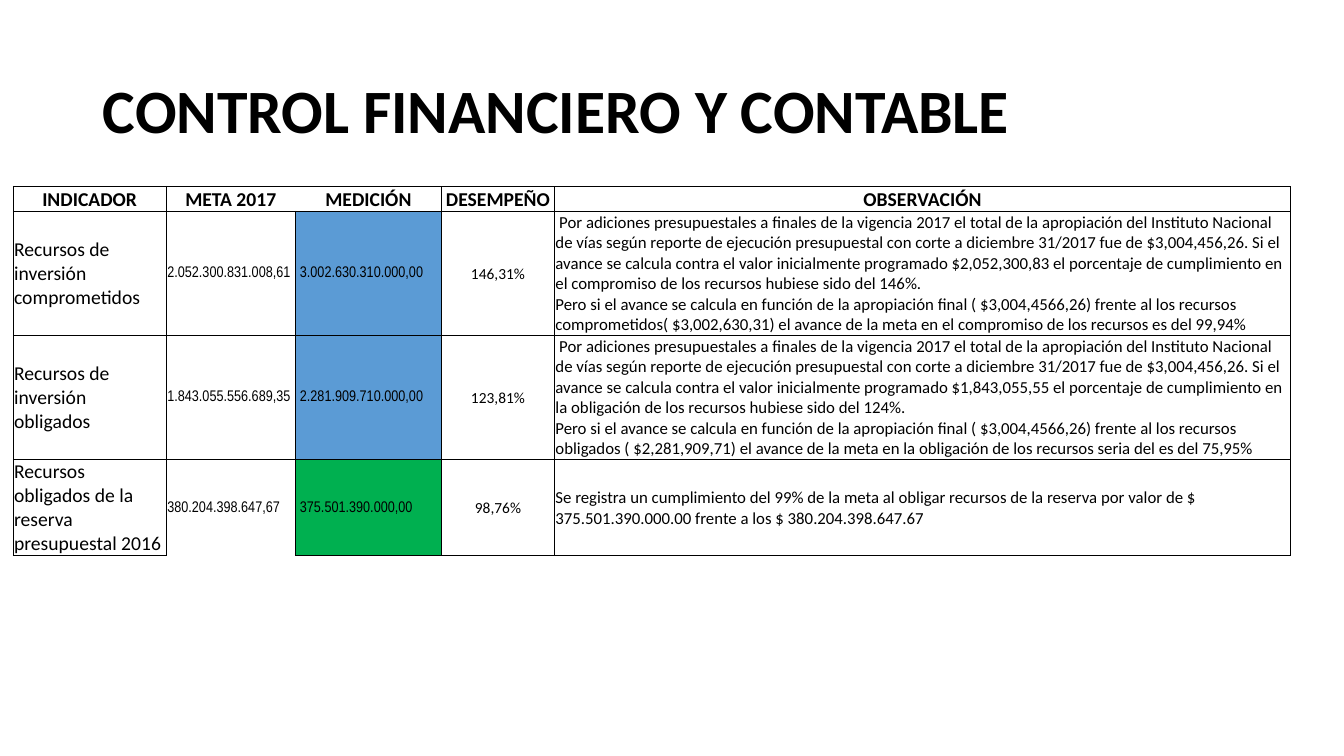
import pptx
import pptx.dml.color
import pptx.enum.text
import pptx.oxml
import pptx.oxml.ns
import pptx.util
from pptx.util import Inches

COLUMN_WIDTHS = [1.52, 1.28, 1.45, 1.12, 7.3]
ROW_HEIGHTS = [0.23, 1.23, 1.23, 0.78]
HEADERS = ["INDICADOR", "META 2017", "MEDICIÓN", "DESEMPEÑO", "OBSERVACIÓN"]
BLUE, GREEN, BLACK = "5B9BD5", "00B050", "000000"

BUDGET_NOTE = (
    " Por adiciones presupuestales a finales de la vigencia 2017 el total de la apropiación "
    "del Instituto Nacional de vías según reporte de ejecución presupuestal con corte a "
    "diciembre 31/2017 fue de $3,004,456,26. Si el avance se calcula contra el valor "
    "inicialmente programado {planned} el porcentaje de cumplimiento en {action} de los "
    "recursos hubiese sido del {percent}.\v"
    "Pero si el avance se calcula en función de la apropiación final ( $3,004,4566,26) "
    "frente al los recursos {measured} el avance de la meta en {action} de los recursos {result}"
)

INDICATORS = [
    ["Recursos de inversión comprometidos", "2.052.300.831.008,61",
     " 3.002.630.310.000,00", "146,31%",
     BUDGET_NOTE.format(planned="$2,052,300,83", action="el compromiso", percent="146%",
                        measured="comprometidos( $3,002,630,31)", result="es del 99,94%")],
    ["Recursos de inversión obligados", "1.843.055.556.689,35",
     " 2.281.909.710.000,00", "123,81%",
     BUDGET_NOTE.format(planned="$1,843,055,55", action="la obligación", percent="124%",
                        measured="obligados ( $2,281,909,71)",
                        result="seria del es del 75,95%")],
    ["Recursos obligados de la reserva presupuestal 2016", "380.204.398.647,67",
     " 375.501.390.000,00", "98,76%",
     "Se registra un cumplimiento del 99% de la meta al obligar recursos de la reserva por "
     "valor de $ 375.501.390.000.00 frente a los $ 380.204.398.647.67"],
]
MEASUREMENT_FILLS = [BLUE, BLUE, GREEN]
BODY_STYLES = [("Calibri", 14), ("Arial Narrow", 11), ("Arial Narrow", 11),
               ("Calibri", 11), ("Calibri", 12)]


def color(value):
    return pptx.dml.color.RGBColor.from_string(value)


def format_paragraph(paragraph, font_name, size, bold, centered):
    alignment = pptx.enum.text.PP_ALIGN
    paragraph.alignment = alignment.CENTER if centered else alignment.LEFT
    for run in paragraph.runs:
        run.font.name = font_name
        run.font.size = pptx.util.Pt(size)
        run.font.bold = bold
        run.font.color.rgb = color(BLACK)


def set_borders(cell, widths):
    properties = cell._tc.get_or_add_tcPr()
    namespace = pptx.oxml.ns.nsdecls("a")
    for side in "LRTB":
        width = widths[side]
        paint = f'<a:solidFill><a:srgbClr val="{BLACK}"/></a:solidFill>' if width else "<a:noFill/>"
        properties.append(pptx.oxml.parse_xml(
            f'<a:ln{side} {namespace} w="{int(pptx.util.Pt(width))}">{paint}</a:ln{side}>'))


def border_widths(row, column):
    widths = dict.fromkeys("LRTB", 0.5)
    if column < 3:
        if row == 0:
            widths.update(T=1, B=1)
        elif row == 1:
            widths["T"] = 1
    if column == len(HEADERS) - 1:
        widths["R"] = 1
    if (row, column) == (0, 1):
        widths["R"] = 0
    if (row, column) == (0, 2):
        widths["L"] = 0
    if (row, column) == (len(INDICATORS), 1):
        widths["B"] = 0
    return widths


def fill_cell(cell, text, row, column):
    cell.margin_left = cell.margin_right = cell.margin_top = Inches(0.01)
    cell.margin_bottom = Inches(0)
    cell.vertical_anchor = pptx.enum.text.MSO_ANCHOR.MIDDLE
    set_borders(cell, border_widths(row, column))
    if row > 0 and column == 2:
        cell.fill.solid()
        cell.fill.fore_color.rgb = color(MEASUREMENT_FILLS[row - 1])
    else:
        cell.fill.background()
    paragraph = cell.text_frame.paragraphs[0]
    paragraph.text = text
    font_name, size = BODY_STYLES[column] if row else ("Calibri", 14)
    format_paragraph(paragraph, font_name, size, row == 0, row == 0 or column == 3)


def add_title(slide, text):
    title = slide.shapes.title
    title.left, title.top = Inches(0.92), Inches(0.4)
    title.width, title.height = Inches(11.5), Inches(1.45)
    title.text_frame.text = text
    title.text_frame.vertical_anchor = pptx.enum.text.MSO_ANCHOR.MIDDLE
    paragraph = title.text_frame.paragraphs[0]
    paragraph.line_spacing = 0.9
    format_paragraph(paragraph, "Calibri", 44, True, False)


def add_indicator_table(slide):
    rows = [HEADERS] + INDICATORS
    table = slide.shapes.add_table(
        len(rows), len(HEADERS), Inches(0.13), Inches(1.85),
        Inches(sum(COLUMN_WIDTHS)), Inches(sum(ROW_HEIGHTS))).table
    table.first_row = False
    table.horz_banding = False
    for column, width in zip(table.columns, COLUMN_WIDTHS):
        column.width = Inches(width)
    for row, height in zip(table.rows, ROW_HEIGHTS):
        row.height = Inches(height)
    for row, texts in enumerate(rows):
        for column, text in enumerate(texts):
            fill_cell(table.cell(row, column), text, row, column)


def main():
    presentation = pptx.Presentation()
    presentation.slide_width = Inches(13.33)
    presentation.slide_height = Inches(7.5)
    slide = presentation.slides.add_slide(presentation.slide_layouts[5])
    add_title(slide, "CONTROL FINANCIERO Y CONTABLE")
    add_indicator_table(slide)
    presentation.save("out.pptx")


if __name__ == "__main__":
    main()
